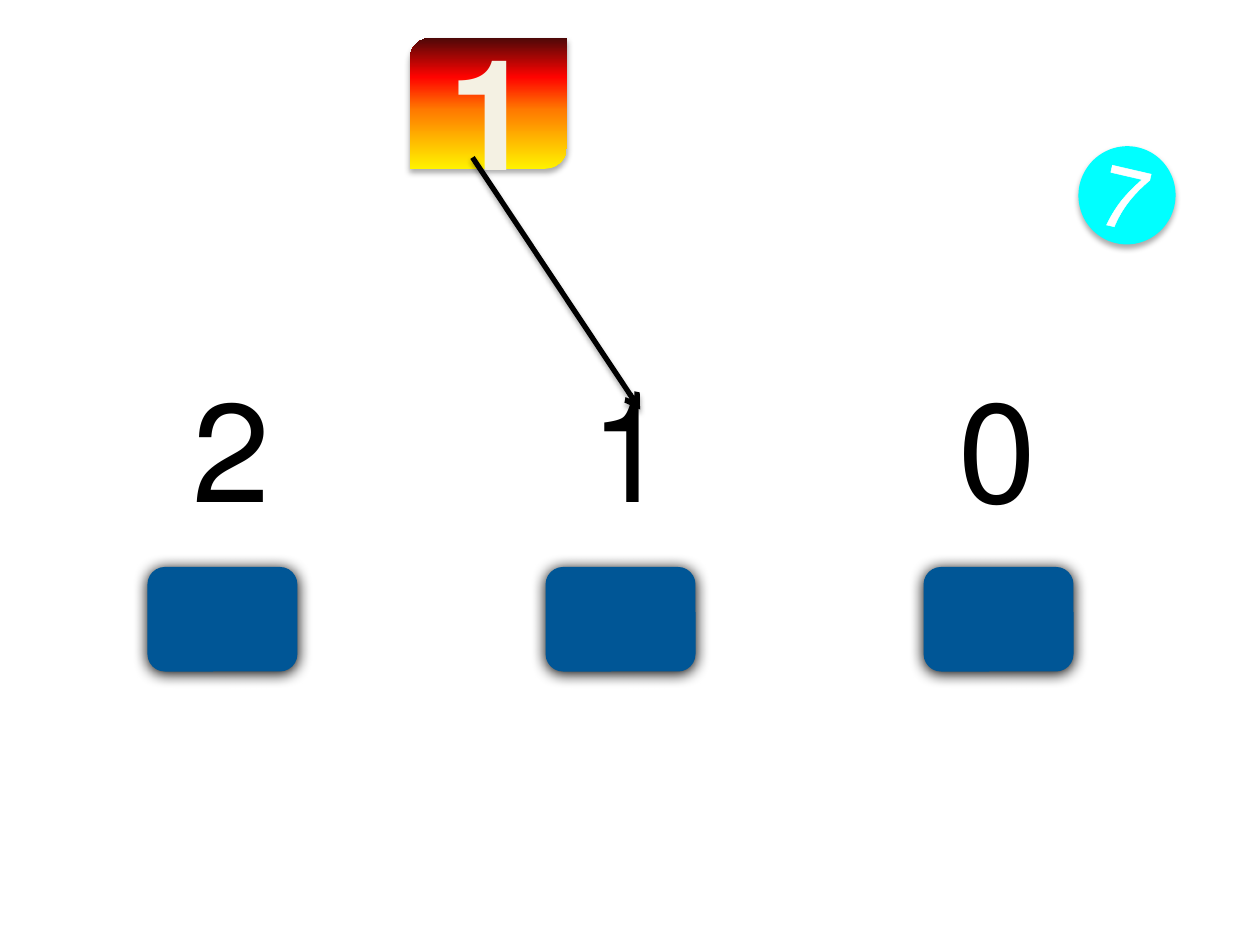
from lxml import etree
from pptx import Presentation
from pptx import util as u
from pptx.dml.color import RGBColor
from pptx.enum import shapes, text
from pptx.oxml import ns

BLACK = RGBColor(0x00, 0x00, 0x00)
WHITE = RGBColor(0xFF, 0xFF, 0xFF)
CYAN = RGBColor(0x00, 0xFF, 0xFF)
BLUE = RGBColor(0x00, 0x56, 0x96)
CREAM = RGBColor(0xF4, 0xF1, 0xE3)
NAVY = RGBColor(0x05, 0x46, 0x97)
FLAME = [(0, RGBColor(0xFF, 0xF2, 0x00)), (45, RGBColor(0xFF, 0x7A, 0x00)),
         (70, RGBColor(0xFF, 0x03, 0x00)), (100, RGBColor(0x4D, 0x08, 0x08))]

# Shadows: opacity in percent, blur and distance in points
SOFT = (32, 3.5, 2.2)
DEEP = (100, 8.5, 1)
THIN = (35, 3.1, 1.8)


def add(node, tag, **attrs):
    values = {key: str(val) for key, val in attrs.items()}
    return etree.SubElement(node, ns.qn(tag), values)


class Deck:
    big = {"size": u.Pt(80), "name": "Arial"}

    def __init__(self, slide):
        self.slide = slide

    def shade(self, effects, style):
        alpha, blur, dist = style
        shadow = add(effects, "a:outerShdw", blurRad=u.Pt(blur), dist=u.Pt(dist),
                     dir=90 * 60000, rotWithShape=0)
        color = add(shadow, "a:srgbClr", val=BLACK)
        add(color, "a:alpha", val=alpha * 1000)

    def shape(self, kind, box, fill, shadow):
        item = self.slide.shapes.add_shape(kind, *map(u.Inches, box))
        props = item._element.spPr
        if isinstance(fill, list):
            item.fill.gradient()
            item.fill.gradient_angle = 90
            stops = props.find(".//" + ns.qn("a:gsLst"))
            for old in list(stops):
                stops.remove(old)
            for pos, color in fill:
                add(add(stops, "a:gs", pos=pos * 1000), "a:srgbClr", val=color)
        else:
            item.fill.solid()
            item.fill.fore_color.rgb = fill
        item.line.fill.background()
        item.shadow.inherit = False
        self.shade(props.find(ns.qn("a:effectLst")), shadow)
        return item

    def words(self, item, string, color, style, edge=None):
        para = item.text_frame.paragraphs[0]
        para.alignment = text.PP_ALIGN.CENTER
        para._p.get_or_add_pPr().set("rtl", "1")
        run = para.add_run()
        run.text = string
        for key, val in style.items():
            setattr(run.font, key, val)
        run.font.color.rgb = color
        if edge:
            tint, width = edge
            line = etree.Element(ns.qn("a:ln"), w=str(u.Pt(width)))
            add(add(line, "a:solidFill"), "a:srgbClr", val=tint)
            run._r.get_or_add_rPr().insert(0, line)

    def label(self, string, box, color=BLACK, style=big, edge=None, wrap=True):
        item = self.slide.shapes.add_textbox(*map(u.Inches, box))
        item.text_frame.word_wrap = wrap
        item.text_frame.auto_size = text.MSO_AUTO_SIZE.SHAPE_TO_FIT_TEXT
        self.words(item, string, color, style, edge)

    def arrow(self, start, end, shadow):
        item = self.slide.shapes.add_connector(
            shapes.MSO_CONNECTOR.STRAIGHT, *map(u.Inches, start + end))
        item.line.color.rgb = BLACK
        item.line.width = u.Pt(3)
        props = item._element.spPr
        add(props.find(ns.qn("a:ln")), "a:tailEnd", type="arrow")
        self.shade(add(props, "a:effectLst"), shadow)


def main():
    prs = Presentation()
    prs.slide_width, prs.slide_height = u.Inches(10), u.Inches(7.5)
    deck = Deck(prs.slides.add_slide(prs.slide_layouts[6]))
    form = shapes.MSO_SHAPE

    # Round badge
    badge = deck.shape(form.OVAL, (8.56, 1.16, 0.77, 0.78), CYAN, SOFT)
    badge.rotation = 13.1
    badge.text_frame.vertical_anchor = text.MSO_ANCHOR.MIDDLE
    deck.words(badge, "7", WHITE, {"size": u.Pt(48), "name": "Calibri"}, (WHITE, 1.45))

    # Flame tile
    deck.shape(form.ROUND_2_DIAG_RECTANGLE, (3.25, 0.3, 1.25, 1.04), FLAME, SOFT)

    # Answer buttons
    for left in (7.33, 4.33, 1.17):
        deck.shape(form.ROUNDED_RECTANGLE, (left, 4.5, 1.19, 0.83), BLUE, DEEP)

    # Number on the tile
    deck.label("1", (3.45, 0.08, 0.89, 1.58), CREAM,
               {"size": u.Pt(88), "name": "Arial", "bold": True}, (NAVY, 1), wrap=False)

    # Numbers above the buttons
    for digit, left in (("0", 7.25), ("1", 4.33), ("2", 1.17)):
        deck.label(digit, (left, 2.83, 1.33, 1.45))

    # Arrow from the tile to its match
    deck.arrow((3.75, 1.25), (5.08, 3.25), THIN)

    prs.save("out.pptx")


if __name__ == "__main__":
    main()
